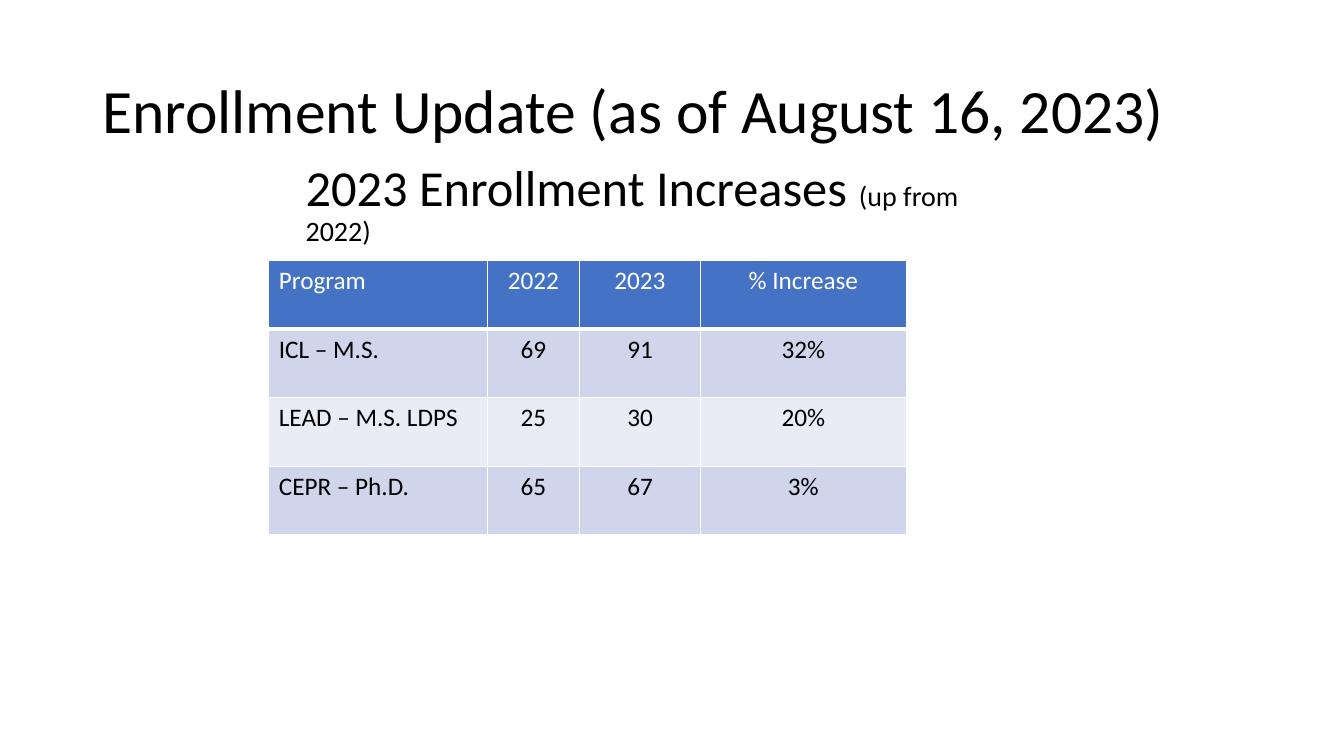
"""Build the enrollment update slide with its program table."""
from dataclasses import dataclass

from lxml import etree
from pptx import Presentation
from pptx import util as u
from pptx.dml.color import RGBColor
from pptx.enum import text
from pptx.oxml import ns
from pptx.slide import Slide
from pptx.table import _Cell
from pptx.text.text import _Run

GRID_COLUMNS, GRID_ROWS = 160, 90
SLIDE_WIDTH, SLIDE_HEIGHT = u.Inches(13.33), u.Inches(7.5)


@dataclass(frozen=True)
class Theme:
    font: str = "Calibri"
    ink: str = "000000"
    white: str = "FFFFFF"
    header: str = "4472C4"
    bands: tuple[str, str] = ("CFD5EA", "E9EBF5")
    title_size: int = 44
    subtitle_size: int = 36
    note_size: int = 20
    table_size: int = 18
    border: int = 1
    header_border: int = 3
    line_spacing: float = 0.9


@dataclass(frozen=True)
class Area:
    column: float
    row: float
    columns: float
    rows: float

    def box(self) -> tuple[int, int, int, int]:
        return across(self.column), down(self.row), across(self.columns), down(self.rows)


@dataclass(frozen=True)
class Heading:
    area: Area
    pieces: tuple[tuple[str, int], ...]
    anchor: text.MSO_ANCHOR


@dataclass(frozen=True)
class Program:
    name: str
    before: str
    after: str
    increase: str

    def values(self) -> tuple[str, ...]:
        return self.name, self.before, self.after, self.increase


THEME = Theme()
HEADINGS = (
    Heading(Area(11, 4.8, 138, 17.4),
            (("Enrollment Update (as of August 16, 2023)", THEME.title_size),),
            text.MSO_ANCHOR.MIDDLE),
    Heading(Area(35.2, 18.8, 84.4, 57.1),
            (("2023 Enrollment Increases ", THEME.subtitle_size),
             ("(up from 2022)", THEME.note_size)),
            text.MSO_ANCHOR.TOP),
)
PROGRAMS = (
    Program("Program", "2022", "2023", "% Increase"),
    Program("ICL – M.S.", "69", "91", "32%"),
    Program("LEAD – M.S. LDPS", "25", "30", "20%"),
    Program("CEPR – Ph.D.", "65", "67", "3%"),
)
TABLE_COLUMN, TABLE_ROW, ROW_HEIGHT = 32, 31, 8.17
COLUMN_WIDTHS = (26, 11, 14.4, 24.5)


def across(columns: float) -> int:
    return round(SLIDE_WIDTH * columns / GRID_COLUMNS)


def down(rows: float) -> int:
    return round(SLIDE_HEIGHT * rows / GRID_ROWS)


def format_run(run: _Run, size: int, color: str) -> None:
    run.font.name = THEME.font
    run.font.size = u.Pt(size)
    run.font.bold = False
    run.font.color.rgb = RGBColor.from_string(color)


def draw_heading(slide: Slide, heading: Heading) -> None:
    frame = slide.shapes.add_textbox(*heading.area.box()).text_frame
    frame.word_wrap = True
    frame.vertical_anchor = heading.anchor
    paragraph = frame.paragraphs[0]
    paragraph.line_spacing = THEME.line_spacing
    for words, size in heading.pieces:
        run = paragraph.add_run()
        run.text = words
        format_run(run, size, THEME.ink)


def draw_borders(cell: _Cell, bottom: int) -> None:
    properties = cell._tc.get_or_add_tcPr()
    for side in "LRTB":
        width = bottom if side == "B" else THEME.border
        line = etree.SubElement(properties, ns.qn(f"a:ln{side}"), w=str(u.Pt(width)))
        fill = etree.SubElement(line, ns.qn("a:solidFill"))
        etree.SubElement(fill, ns.qn("a:srgbClr"), val=THEME.white)


def draw_cell(cell: _Cell, words: str, row: int, column: int) -> None:
    is_header = row == 0
    draw_borders(cell, THEME.header_border if is_header else THEME.border)
    cell.fill.solid()
    fill = THEME.header if is_header else THEME.bands[(row - 1) % 2]
    cell.fill.fore_color.rgb = RGBColor.from_string(fill)
    cell.text_frame.text = words
    paragraph = cell.text_frame.paragraphs[0]
    if column > 0:
        paragraph.alignment = text.PP_ALIGN.CENTER
    color = THEME.white if is_header else THEME.ink
    format_run(paragraph.runs[0], THEME.table_size, color)


def draw_table(slide: Slide, programs: tuple[Program, ...]) -> None:
    area = Area(TABLE_COLUMN, TABLE_ROW, sum(COLUMN_WIDTHS), ROW_HEIGHT * len(programs))
    table = slide.shapes.add_table(len(programs), len(COLUMN_WIDTHS), *area.box()).table
    for column, width in zip(table.columns, COLUMN_WIDTHS):
        column.width = across(width)
    for row, program in enumerate(programs):
        table.rows[row].height = down(ROW_HEIGHT)
        for column, words in enumerate(program.values()):
            draw_cell(table.cell(row, column), words, row, column)


def main() -> None:
    presentation = Presentation()
    presentation.slide_width, presentation.slide_height = SLIDE_WIDTH, SLIDE_HEIGHT
    slide = presentation.slides.add_slide(presentation.slide_layouts[6])
    for heading in HEADINGS:
        draw_heading(slide, heading)
    draw_table(slide, PROGRAMS)
    presentation.save("out.pptx")


if __name__ == "__main__":
    main()
